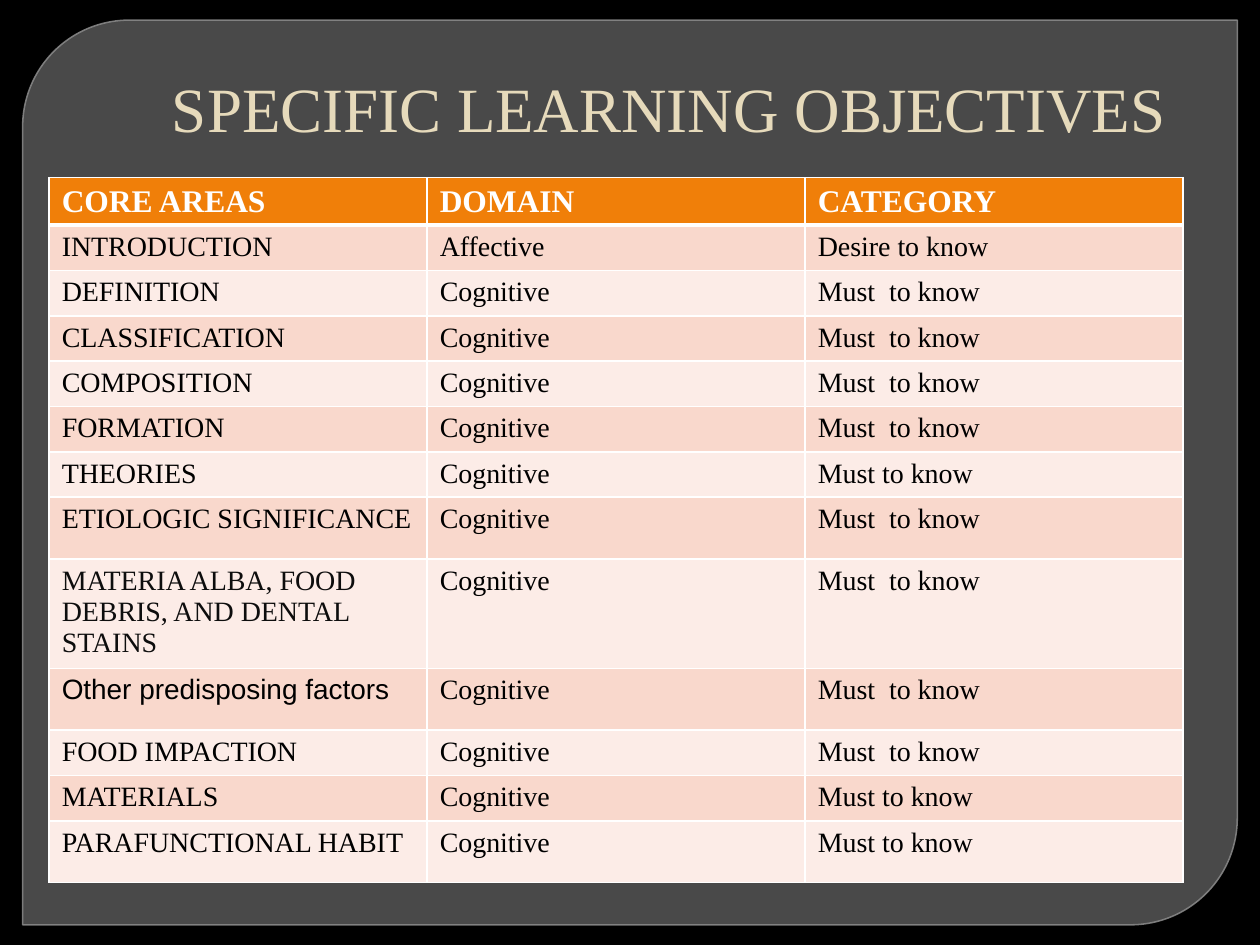
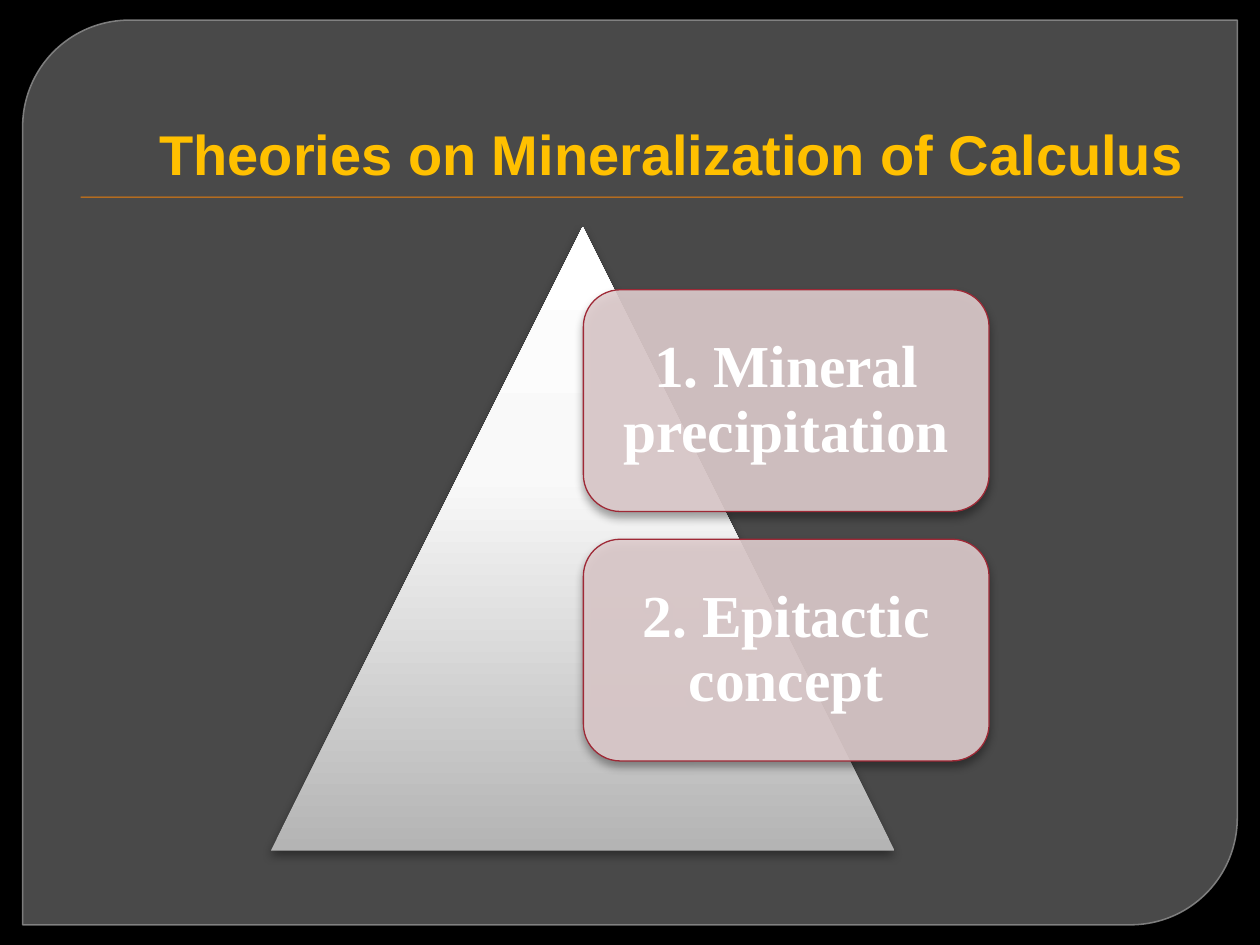
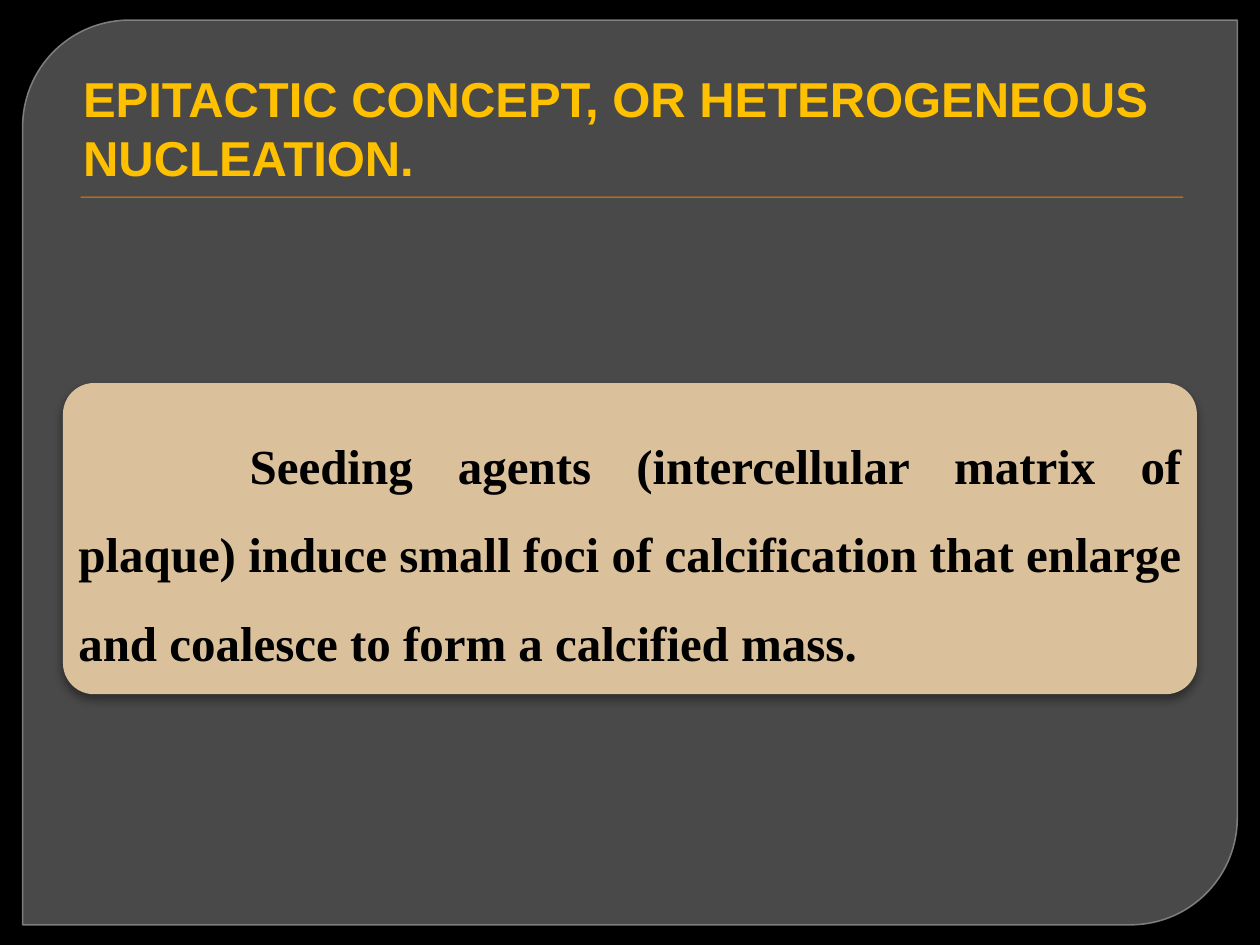
from dataclasses import dataclass
from typing import NamedTuple, Optional

from lxml.etree import SubElement
from pptx import Presentation
from pptx.dml.color import RGBColor
from pptx.enum.shapes import MSO_SHAPE
from pptx.enum.text import MSO_ANCHOR, MSO_AUTO_SIZE, PP_ALIGN
from pptx.oxml import parse_xml
from pptx.oxml.ns import nsdecls, qn
from pptx.util import Pt

PX = 9144  # EMU per px, at 100 px to the inch
TITLE_ONLY = 5


@dataclass(frozen=True)
class Theme:
    serif: str = "Times New Roman"
    sans: str = "Arial"
    black: str = "000000"
    white: str = "FFFFFF"
    soft_black: str = "0D0D0D"
    panel: str = "717171"
    panel_line: str = "898989"
    orange: str = "F07F09"
    cream: str = "E6DABB"
    gold: str = "FFC000"
    bands: tuple = ("F9D8CC", "FCECE7")
    card: str = "DFCDCE"
    card_line: str = "9F2936"
    sand: str = "DAC19B"
    pyramid: tuple = ((0, "B4B4B4"), (60, "F9F9F9"), (100, "FFFFFF"))
    header_size: int = 18
    cell_size: int = 16
    card_size: int = 34
    body_size: int = 28


THEME = Theme()


class Box(NamedTuple):
    left: int
    top: int
    width: int
    height: int

    def emu(self) -> list:
        return [length * PX for length in self]


class TextStyle(NamedTuple):
    font: str
    size: int
    color: str
    bold: bool = False
    alignment: PP_ALIGN = PP_ALIGN.LEFT
    line_spacing: Optional[float] = None
    indent: int = 0


class Shadow(NamedTuple):
    blur: float
    distance: float
    alpha: int


class Outline(NamedTuple):
    color: str
    width: float
    alpha: int = 100


class Figure(NamedTuple):
    kind: MSO_SHAPE
    box: Box
    fill: Optional[str] = None
    alpha: int = 100
    outline: Optional[Outline] = None
    shadow: Optional[Shadow] = None
    adjustments: tuple = ()


class Row(NamedTuple):
    area: str
    domain: str = "Cognitive"
    category: str = "Must  to know"
    height: int = 36
    font: str = THEME.serif
    color: str = THEME.black


SOFT_SHADOW = Shadow(5.2, 3, 40)
RULE_SHADOW = Shadow(1, 1, 75)

# Shared backdrop
BACKDROP = (
    Figure(MSO_SHAPE.ROUND_2_DIAG_RECTANGLE, Box(18, 16, 964, 718), THEME.panel, 65,
           Outline(THEME.panel_line, 0.87, 88), adjustments=(0.118, 0)),
    Figure(MSO_SHAPE.RECTANGLE, Box(64, 156, 875, 1), THEME.orange, shadow=RULE_SHADOW),
)

# Slide contents
TITLE_BOX = Box(50, 28, 900, 125)
HEADER = Row("CORE AREAS", "DOMAIN", "CATEGORY", 37, color=THEME.white)
OBJECTIVES = (
    Row("INTRODUCTION", "Affective", "Desire to know"),
    Row("DEFINITION"),
    Row("CLASSIFICATION"),
    Row("COMPOSITION"),
    Row("FORMATION"),
    Row("THEORIES", category="Must to know"),
    Row("ETIOLOGIC SIGNIFICANCE", height=49),
    Row("MATERIA ALBA, FOOD DEBRIS, AND DENTAL STAINS", height=87, color=THEME.soft_black),
    Row("Other predisposing factors", height=49, font=THEME.sans),
    Row("FOOD IMPACTION"),
    Row("MATERIALS", category="Must to know"),
    Row("PARAFUNCTIONAL HABIT", category="Must to know", height=49),
)
TABLE_LEFT, TABLE_TOP, COLUMN_WIDTH = 39, 141, 300
THEORIES = ("1. Mineral precipitation", "2. Epitactic concept")
FIRST_CARD, CARD_STEP = Box(463, 230, 322, 176), 198
SEEDING = ("Seeding agents (intercellular matrix of plaque) induce small foci of "
           "calcification that enlarge and coalesce to form a calcified mass.")


def set_attributes(target, values: dict) -> None:
    for name, value in values.items():
        setattr(target, name, value)


def write_text(frame, text: str, style: TextStyle) -> None:
    paragraph = frame.paragraphs[0]
    set_attributes(paragraph, {"alignment": style.alignment, "line_spacing": style.line_spacing})
    if style.indent:
        properties = paragraph._p.get_or_add_pPr()
        properties.set("marL", "0")
        properties.set("indent", str(style.indent * PX))
    run = paragraph.add_run()
    run.text = text
    set_attributes(run.font, {"name": style.font, "size": Pt(style.size), "bold": style.bold})
    run.font.color.rgb = RGBColor.from_string(style.color)


def set_color(fill, color: str, alpha: int = 100) -> None:
    fill.solid()
    fill.fore_color.rgb = RGBColor.from_string(color)
    if alpha < 100:
        element = fill._xPr.find(qn("a:solidFill")).find(qn("a:srgbClr"))
        SubElement(element, qn("a:alpha")).set("val", str(alpha * 1000))


def add_shadow(shape, shadow: Shadow) -> None:
    effects = shape._element.spPr.find(qn("a:effectLst"))
    effects.append(parse_xml(
        f'<a:outerShdw {nsdecls("a")} blurRad="{Pt(shadow.blur)}" dist="{Pt(shadow.distance)}" '
        f'dir="5400000" algn="ctr" rotWithShape="0"><a:srgbClr val="{THEME.black}">'
        f'<a:alpha val="{shadow.alpha * 1000}"/></a:srgbClr></a:outerShdw>'))


def add_figure(slide, figure: Figure):
    shape = slide.shapes.add_shape(figure.kind, *figure.box.emu())
    for index, value in enumerate(figure.adjustments):
        shape.adjustments[index] = value
    shape.shadow.inherit = False
    if figure.fill:
        set_color(shape.fill, figure.fill, figure.alpha)
    if figure.outline:
        set_color(shape.line.fill, figure.outline.color, figure.outline.alpha)
        shape.line.width = Pt(figure.outline.width)
    else:
        shape.line.fill.background()
    if figure.shadow:
        add_shadow(shape, figure.shadow)
    return shape


def add_text_figure(slide, figure: Figure, text: str, style: TextStyle) -> None:
    frame = add_figure(slide, figure).text_frame
    margins = dict.fromkeys(("margin_left", "margin_top", "margin_right", "margin_bottom"), 5 * PX)
    set_attributes(frame, {"word_wrap": True, "vertical_anchor": MSO_ANCHOR.MIDDLE, **margins})
    write_text(frame, text, style)


def add_gradient(shape, stops: tuple) -> None:
    stop_xml = "".join(f'<a:gs pos="{position * 1000}"><a:srgbClr val="{color}"/></a:gs>'
                       for position, color in stops)
    shape._element.spPr.find(qn("a:prstGeom")).addnext(parse_xml(
        f'<a:gradFill {nsdecls("a")} rotWithShape="1"><a:gsLst>{stop_xml}</a:gsLst>'
        f'<a:lin ang="16200000" scaled="0"/></a:gradFill>'))


def add_titled_slide(presentation, title: str, style: TextStyle, box: Box = TITLE_BOX):
    slide = presentation.slides.add_slide(presentation.slide_layouts[TITLE_ONLY])
    shape = slide.shapes.title
    set_attributes(shape, dict(zip(("left", "top", "width", "height"), box.emu())))
    set_attributes(shape.text_frame, {"word_wrap": True, "auto_size": MSO_AUTO_SIZE.NONE,
                                      "vertical_anchor": MSO_ANCHOR.BOTTOM,
                                      "margin_left": 16 * PX})
    write_text(shape.text_frame, title, style)
    return slide


def add_backdrop(presentation, slide) -> None:
    """Place the panel and rule on the layout, behind everything else."""
    presentation.slide_master.background.fill.solid()
    presentation.slide_master.background.fill.fore_color.rgb = RGBColor.from_string(THEME.black)
    tree = presentation.slide_layouts[TITLE_ONLY].shapes._spTree
    for position, figure in enumerate(BACKDROP, start=2):
        tree.insert(position, add_figure(slide, figure)._element)


def format_cell(cell, text: str, style: TextStyle, fill: str, edges: dict) -> None:
    write_text(cell.text_frame, text, style)
    properties = cell._tc.get_or_add_tcPr()
    for edge, width in edges.items():
        properties.append(parse_xml(
            f'<a:{edge} {nsdecls("a")} w="{Pt(width)}"><a:solidFill>'
            f'<a:srgbClr val="{THEME.white}"/></a:solidFill></a:{edge}>'))
    set_color(cell.fill, fill)


def add_objectives_table(slide) -> None:
    rows = (HEADER, *OBJECTIVES)
    box = Box(TABLE_LEFT, TABLE_TOP, 3 * COLUMN_WIDTH, sum(row.height for row in rows))
    table = slide.shapes.add_table(len(rows), 3, *box.emu()).table
    table.horz_banding = False
    for row_index, row in enumerate(rows):
        table.rows[row_index].height = row.height * PX
        is_header = row is HEADER
        fill = THEME.orange if is_header else THEME.bands[(row_index - 1) % 2]
        size = THEME.header_size if is_header else THEME.cell_size
        edges = {"lnL": 1, "lnR": 1, "lnT": 3 if row_index == 1 else 1,
                 "lnB": 3 if is_header else 1}
        plain = TextStyle(THEME.serif, size, THEME.white if is_header else THEME.black, is_header)
        area = plain._replace(font=row.font, color=row.color)
        cells = ((row.area, area), (row.domain, plain), (row.category, plain))
        for column, (text, style) in enumerate(cells):
            format_cell(table.cell(row_index, column), text, style, fill, edges)


def main() -> None:
    presentation = Presentation()
    set_attributes(presentation, {"slide_width": 1000 * PX, "slide_height": 750 * PX})

    # Learning objectives
    slide = add_titled_slide(
        presentation, "SPECIFIC LEARNING OBJECTIVES",
        TextStyle(THEME.serif, 36, THEME.cream, alignment=PP_ALIGN.CENTER),
        Box(78, 31, 900, 89))
    add_backdrop(presentation, slide)
    add_objectives_table(slide)

    # Theories pyramid
    slide = add_titled_slide(
        presentation, "Theories on Mineralization of Calculus",
        TextStyle(THEME.sans, 32, THEME.gold, True, PP_ALIGN.RIGHT))
    pyramid = add_figure(slide, Figure(MSO_SHAPE.ISOSCELES_TRIANGLE, Box(215, 180, 495, 495),
                                       shadow=SOFT_SHADOW))
    add_gradient(pyramid, THEME.pyramid)
    card_style = TextStyle(THEME.serif, THEME.card_size, THEME.white, True, PP_ALIGN.CENTER, 0.9)
    for index, theory in enumerate(THEORIES):
        box = FIRST_CARD._replace(top=FIRST_CARD.top + index * CARD_STEP)
        card = Figure(MSO_SHAPE.ROUNDED_RECTANGLE, box, THEME.card, 90,
                      Outline(THEME.card_line, 0.75), SOFT_SHADOW)
        add_text_figure(slide, card, theory, card_style)

    # Epitactic concept
    slide = add_titled_slide(
        presentation, "EPITACTIC CONCEPT, OR HETEROGENEOUS NUCLEATION.",
        TextStyle(THEME.sans, 28, THEME.gold, True))
    statement = Figure(MSO_SHAPE.ROUNDED_RECTANGLE, Box(50, 304, 900, 247), THEME.sand,
                       shadow=SOFT_SHADOW, adjustments=(0.1,))
    add_text_figure(slide, statement, SEEDING,
                    TextStyle(THEME.serif, THEME.body_size, THEME.black, True,
                              PP_ALIGN.JUSTIFY, 1.5, 136))

    presentation.save("out.pptx")


if __name__ == "__main__":
    main()
